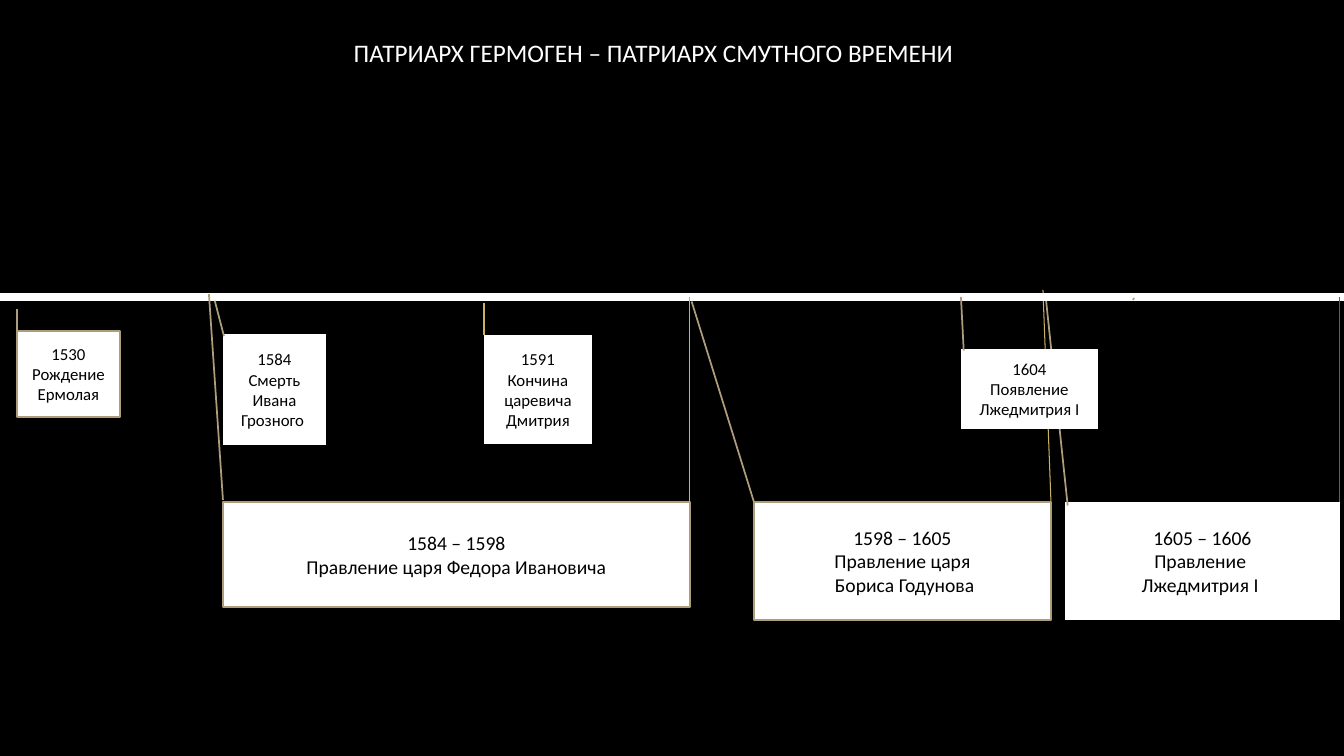
"""Builds a timeline slide about Patriarch Hermogenes and the Time of Troubles."""
from dataclasses import dataclass

from lxml import etree
from pptx import Presentation
from pptx import util as u
from pptx.dml import color
from pptx.enum import shapes, text
from pptx.oxml import ns

COLORS = {
    "night": "000000",
    "paper": "FFFFFF",
    "sand": "AD9D7B",
    "gold": "CAB263",
    "rust": "B4421A",
}
BORDERED = shapes.MSO_SHAPE.LINE_CALLOUT_1
PLAIN = shapes.MSO_SHAPE.LINE_CALLOUT_1_NO_BORDER
WIDTH, HEIGHT = 1344, 756
AXIS_Y, REIGN_Y = 297, 502
EVENT_SIZE, REIGN_SIZE, TITLE_SIZE = 12, 14, 18
FRAME_FORMAT = {
    "word_wrap": True,
    "vertical_anchor": text.MSO_ANCHOR.MIDDLE,
}


@dataclass(frozen=True)
class Callout:
    box: tuple[int, int, int, int]
    leader: tuple[float, float, float, float]
    lines: tuple[str, ...]
    size: int = EVENT_SIZE
    outline: shapes.MSO_SHAPE = PLAIN


@dataclass(frozen=True)
class Rule:
    start: tuple[int, int]
    end: tuple[int, int]
    hue: str = "gold"
    weight: float = 0.75


TIMELINE = (
    Callout((1065, REIGN_Y, 275, 118), (0.03, 0.01, -1.74, -0.07),
            ("1605 – 1606", "Правление ", "Лжедмитрия I "), REIGN_SIZE),
    Rule((1051, REIGN_Y), (1043, 290)),
    Rule((0, AXIS_Y), (WIDTH, AXIS_Y), "paper", 6),
    Callout((17, 331, 103, 86), (0.02, 0, -0.26, 0),
            ("1530", "Рождение Ермолая"), outline=BORDERED),
    Callout((223, 334, 103, 111), (0.02, 0.01, -0.3, -0.08),
            ("1584", "Смерть Ивана Грозного ")),
    Callout((961, 349, 137, 80), (-0.65, 0, 0.02, 0.02),
            ("1604", "Появление", "Лжедмитрия I")),
    Callout((223, REIGN_Y, 467, 105), (-0.02, 0, -1.98, -0.03),
            ("1584 – 1598", "Правление царя Федора Ивановича"),
            REIGN_SIZE, BORDERED),
    Callout((754, REIGN_Y, 297, 118), (0, 0, -1.7, -0.21),
            ("1598 – 1605", "Правление царя", " Бориса Годунова"),
            REIGN_SIZE, BORDERED),
    Callout((484, 335, 108, 109), (-0.32, 6.01, -0.34, 6.02),
            ("1591", "Кончина царевича Дмитрия")),
    Rule((690, REIGN_Y), (690, AXIS_Y)),
    Rule((484, 303), (484, 335)),
    Rule((1340, REIGN_Y), (1340, AXIS_Y), "rust"),
)


def px(length: int) -> int:
    return round(length * u.Inches(1) / 100.8)


def rgb(name: str) -> color.RGBColor:
    return color.RGBColor.from_string(COLORS[name])


def apply(target, values: dict) -> None:
    for attribute, value in values.items():
        setattr(target, attribute, value)


def write(frame, lines: tuple[str, ...], size: int, hue: str) -> None:
    apply(frame, {"word_wrap": True})
    for index, line in enumerate(lines):
        paragraph = frame.add_paragraph() if index else frame.paragraphs[0]
        paragraph.alignment = text.PP_ALIGN.CENTER
        run = paragraph.add_run()
        run.text = line
        apply(run.font, {"name": "Calibri", "size": u.Pt(size)})
        run.font.color.rgb = rgb(hue)


def draw_callout(slide, callout: Callout) -> None:
    card = slide.shapes.add_shape(callout.outline, *map(px, callout.box))
    card.shadow.inherit = False
    for index, ratio in enumerate(callout.leader):
        card.adjustments[index] = ratio
    card.fill.solid()
    card.fill.fore_color.rgb = rgb("paper")
    card.line.color.rgb = rgb("sand")
    card.line.width = u.Pt(1.25)
    apply(card.text_frame, FRAME_FORMAT)
    write(card.text_frame, callout.lines, callout.size, "night")


def draw_rule(slide, rule: Rule) -> None:
    stroke = slide.shapes.add_connector(
        shapes.MSO_CONNECTOR.STRAIGHT, *map(px, rule.start + rule.end))
    stroke.line.color.rgb = rgb(rule.hue)
    stroke.line.width = u.Pt(rule.weight)
    etree.SubElement(stroke._element.spPr, ns.qn("a:effectLst"))


def draw_title(slide) -> None:
    title = slide.shapes.add_textbox(*map(px, (92, 32, 1123, 40)))
    write(title.text_frame, ("ПАТРИАРХ ГЕРМОГЕН – ПАТРИАРХ СМУТНОГО ВРЕМЕНИ",),
          TITLE_SIZE, "paper")
    title.text_frame.auto_size = text.MSO_AUTO_SIZE.SHAPE_TO_FIT_TEXT


def main() -> None:
    deck = Presentation()
    apply(deck, {"slide_width": px(WIDTH), "slide_height": px(HEIGHT)})
    slide = deck.slides.add_slide(deck.slide_layouts[6])
    slide.background.fill.solid()
    slide.background.fill.fore_color.rgb = rgb("night")
    for part in TIMELINE:
        if isinstance(part, Callout):
            draw_callout(slide, part)
        else:
            draw_rule(slide, part)
    draw_title(slide)
    deck.save("out.pptx")


if __name__ == "__main__":
    main()
